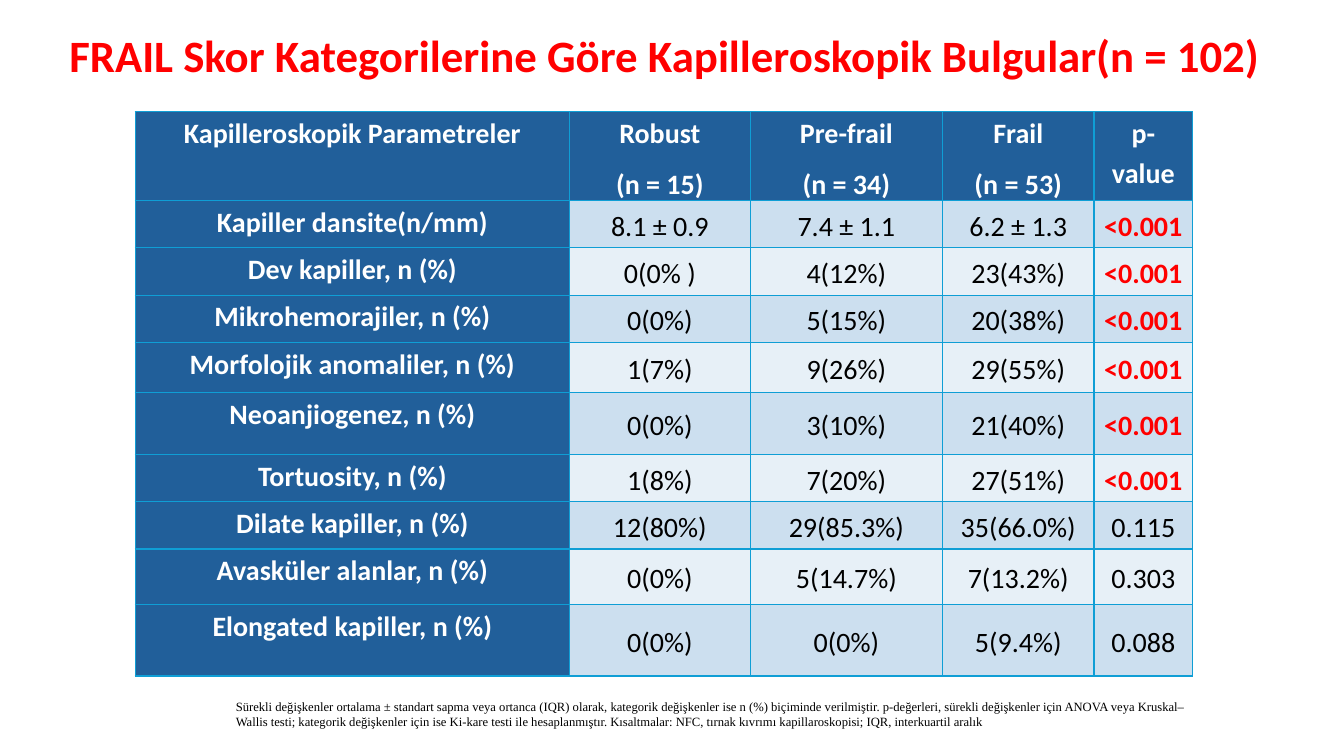
"""Build the slide with the capillaroscopy findings by FRAIL score category."""
from dataclasses import dataclass

from lxml import etree
from pptx import Presentation
from pptx.dml.color import RGBColor
from pptx.enum.text import MSO_ANCHOR, PP_ALIGN
from pptx.oxml.ns import qn
from pptx.util import Pt

CENTER = PP_ALIGN.CENTER
LEFT = PP_ALIGN.LEFT
TOP = MSO_ANCHOR.TOP
MIDDLE = MSO_ANCHOR.MIDDLE
PX = 9144


@dataclass(frozen=True)
class Theme:
    header: str = "215F9A"
    bands: tuple = ("CCDFEF", "E7F0F7")
    border: str = "0F9ED5"
    accent: str = "FF0000"
    light: str = "FFFFFF"
    dark: str = "000000"
    body_font: str = "Calibri"
    note_font: str = "Times New Roman"
    title_size: int = 32
    table_size: int = 20
    note_size: int = 9


THEME = Theme()


def style_paragraph(paragraph, font_name, size, color, bold, alignment):
    paragraph.alignment = alignment
    paragraph.font.name = font_name
    paragraph.font.size = Pt(size)
    paragraph.font.bold = bold
    paragraph.font.color.rgb = RGBColor.from_string(color)


def add_borders(cell):
    properties = cell._tc.get_or_add_tcPr()
    for position, side in enumerate(("a:lnL", "a:lnR", "a:lnT", "a:lnB")):
        line = etree.Element(qn(side), w=str(Pt(1)))
        fill = etree.SubElement(line, qn("a:solidFill"))
        etree.SubElement(fill, qn("a:srgbClr"), val=THEME.border)
        properties.insert(position, line)


presentation = Presentation()
presentation.slide_width = 1333 * PX
presentation.slide_height = 750 * PX
slide = presentation.slides.add_slide(presentation.slide_layouts[6])

TITLE = "FRAIL Skor Kategorilerine Göre Kapilleroskopik Bulgular(n = 102)"
NOTE = (
    "Sürekli değişkenler ortalama ± standart sapma veya ortanca (IQR) olarak, "
    "kategorik değişkenler ise n (%) biçiminde verilmiştir. p-değerleri, sürekli "
    "değişkenler için ANOVA veya Kruskal–Wallis testi; kategorik değişkenler için "
    "ise Ki-kare testi ile hesaplanmıştır. Kısaltmalar: NFC, tırnak kıvrımı "
    "kapillaroskopisi; IQR, interkuartil aralık"
)
TEXT_BOXES = [
    (TITLE, (59, 20, 1210, 68), MIDDLE, THEME.body_font, THEME.title_size, THEME.accent, True),
    (NOTE, (224, 688, 965, 40), TOP, THEME.note_font, THEME.note_size, THEME.dark, False),
]
for text, box, anchor, font_name, size, color, bold in TEXT_BOXES:
    text_frame = slide.shapes.add_textbox(*(length * PX for length in box)).text_frame
    text_frame.word_wrap = True
    text_frame.vertical_anchor = anchor
    text_frame.text = text
    style_paragraph(text_frame.paragraphs[0], font_name, size, color, bold, LEFT)

COLUMN_WIDTHS = [431, 179, 191, 150, 98]
ROW_HEIGHTS = [79, 47, 47, 47, 50, 61, 47, 47, 55, 71]
ROWS = [
    ("Kapilleroskopik Parametreler", "Robust\n(n = 15)", "Pre-frail\n(n = 34)", "Frail\n(n = 53)", "p-value"),
    ("Kapiller dansite(n/mm)", "8.1 ± 0.9", "7.4 ± 1.1", "6.2 ± 1.3", "<0.001"),
    ("Dev kapiller, n (%)", "0(0% )", "4(12%)", "23(43%)", "<0.001"),
    ("Mikrohemorajiler, n (%)", "0(0%)", "5(15%)", "20(38%)", "<0.001"),
    ("Morfolojik anomaliler, n (%)", "1(7%)", "9(26%)", "29(55%)", "<0.001"),
    ("Neoanjiogenez, n (%)", "0(0%)", "3(10%)", "21(40%)", "<0.001"),
    ("Tortuosity, n (%)", "1(8%)", "7(20%)", "27(51%)", "<0.001"),
    ("Dilate kapiller, n (%)", "12(80%)", "29(85.3%)", "35(66.0%)", "0.115"),
    ("Avasküler alanlar, n (%)", "0(0%)", "5(14.7%)", "7(13.2%)", "0.303"),
    ("Elongated kapiller, n (%)", "0(0%)", "0(0%)", "5(9.4%)", "0.088"),
]
table = slide.shapes.add_table(
    len(ROWS), len(COLUMN_WIDTHS), 134 * PX, 111 * PX,
    sum(COLUMN_WIDTHS) * PX, sum(ROW_HEIGHTS) * PX,
).table
table.first_row = False
table.horz_banding = False
for column, width in zip(table.columns, COLUMN_WIDTHS):
    column.width = width * PX
for row, height in zip(table.rows, ROW_HEIGHTS):
    row.height = height * PX

for row_index, values in enumerate(ROWS):
    for column_index, value in enumerate(values):
        cell = table.cell(row_index, column_index)
        is_heading = row_index == 0 or column_index == 0
        is_significant = value.startswith("<")
        if is_heading:
            background, color = THEME.header, THEME.light
        else:
            background = THEME.bands[(row_index - 1) % 2]
            color = THEME.accent if is_significant else THEME.dark
        cell.fill.solid()
        cell.fill.fore_color.rgb = RGBColor.from_string(background)
        cell.vertical_anchor = TOP if is_heading else MIDDLE
        cell.margin_left = cell.margin_right = 7 * PX
        cell.margin_top = cell.margin_bottom = 0
        cell.text = value
        for paragraph in cell.text_frame.paragraphs:
            style_paragraph(paragraph, THEME.body_font, THEME.table_size, color,
                            is_heading or is_significant, CENTER)
            paragraph.line_spacing = 1.15
            paragraph.space_after = Pt(8)
        add_borders(cell)

presentation.save("out.pptx")
